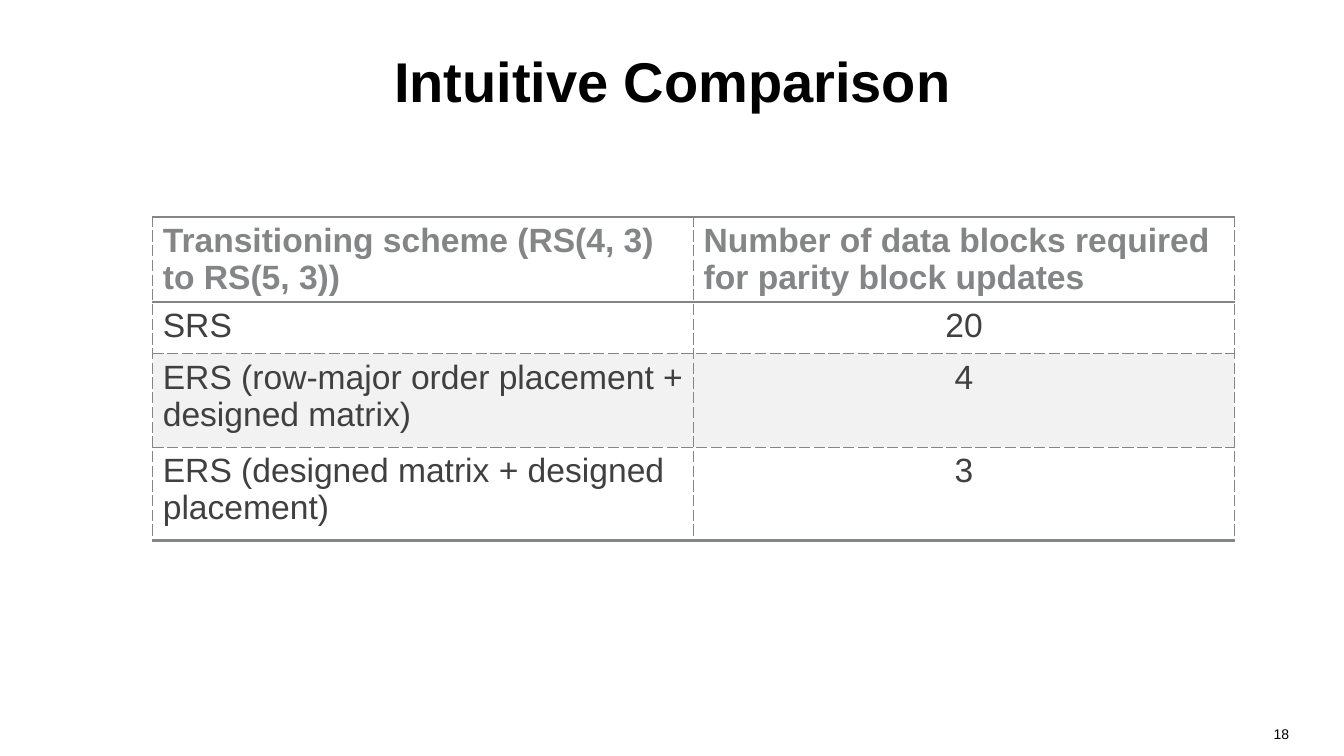
from dataclasses import dataclass
from typing import Any

from lxml import etree
from pptx import Presentation
from pptx import util as u
from pptx.dml.color import RGBColor
from pptx.enum import text
from pptx.oxml import ns

COLOURS = {
    "white": "FFFFFF",
    "black": "000000",
    "rule": "848587",
    "body": "404040",
    "band": "F2F2F2",
}
FONT = "Arial"
COLUMN_WIDTH = u.Cm(13.63)


@dataclass(frozen=True)
class Border:
    width: float
    dash: str


@dataclass(frozen=True)
class ComparisonRow:
    scheme: str
    blocks: str
    height: float
    fill: str = "white"
    header: bool = False


THICK = Border(2.25, "solid")
THIN = Border(0.75, "sysDash")

ROWS = [
    ComparisonRow("Transitioning scheme (RS(4, 3) to RS(5, 3))",
                  "Number of data blocks required for parity block updates",
                  2.14, header=True),
    ComparisonRow("SRS", "20", 1.3),
    ComparisonRow("ERS (row-major order placement + designed matrix)", "4", 2.35, "band"),
    ComparisonRow("ERS (designed matrix + designed placement)", "3", 2.35),
]


def set_attributes(target: Any, values: dict[str, Any]) -> None:
    for name, value in values.items():
        setattr(target, name, value)


def write_text(frame: Any, words: str, size: float, colour: str,
               bold: bool, alignment: Any) -> None:
    paragraph = frame.paragraphs[0]
    paragraph.alignment = alignment
    run = paragraph.add_run()
    run.text = words
    set_attributes(run.font, {"name": FONT, "size": u.Pt(size), "bold": bold})
    run.font.color.rgb = RGBColor.from_string(COLOURS[colour])


def draw_border(cell: Any, side: str, border: Border) -> None:
    properties = cell._tc.get_or_add_tcPr()
    line = etree.SubElement(properties, ns.qn(f"a:ln{side}"), w=str(u.Pt(border.width)))
    fill = etree.SubElement(line, ns.qn("a:solidFill"))
    etree.SubElement(fill, ns.qn("a:srgbClr"), val=COLOURS["rule"])
    etree.SubElement(line, ns.qn("a:prstDash"), val=border.dash)


def draw_row(table: Any, index: int, row: ComparisonRow) -> None:
    table.rows[index].height = u.Cm(row.height)
    top = THICK if index < 2 else THIN
    bottom = THICK if index in (0, len(ROWS) - 1) else THIN
    for column, words in enumerate((row.scheme, row.blocks)):
        cell = table.cell(index, column)
        for side, border in zip("LRTB", (THIN, THIN, top, bottom)):
            draw_border(cell, side, border)
        cell.fill.solid()
        cell.fill.fore_color.rgb = RGBColor.from_string(COLOURS[row.fill])
        centred = column == 1 and not row.header
        write_text(cell.text_frame, words, 24, "rule" if row.header else "body", row.header,
                   text.PP_ALIGN.CENTER if centred else text.PP_ALIGN.LEFT)


def main() -> None:
    presentation = Presentation()
    set_attributes(presentation, {"slide_width": u.Cm(33.87), "slide_height": u.Cm(19.05)})
    slide = presentation.slides.add_slide(presentation.slide_layouts[5])

    # Title
    title = slide.shapes.title
    set_attributes(title, {"left": u.Cm(1.7), "top": u.Cm(0.43),
                           "width": u.Cm(30.48), "height": u.Cm(3.18)})
    title.text_frame.vertical_anchor = text.MSO_ANCHOR.MIDDLE
    write_text(title.text_frame, "Intuitive Comparison", 40, "black", True,
               text.PP_ALIGN.CENTER)

    # Comparison table
    table = slide.shapes.add_table(
        len(ROWS), 2, u.Cm(3.85), u.Cm(5.47), 2 * COLUMN_WIDTH,
        u.Cm(sum(row.height for row in ROWS))).table
    set_attributes(table, {"first_row": True, "horz_banding": False})
    for column in table.columns:
        column.width = COLUMN_WIDTH
    for index, row in enumerate(ROWS):
        draw_row(table, index, row)

    # Page number
    number = slide.shapes.add_textbox(u.Cm(24.84), u.Cm(18.16), u.Cm(7.9), u.Cm(0.89))
    number.text_frame.word_wrap = True
    write_text(number.text_frame, "18", 10, "black", False, text.PP_ALIGN.RIGHT)

    presentation.save("out.pptx")


if __name__ == "__main__":
    main()
